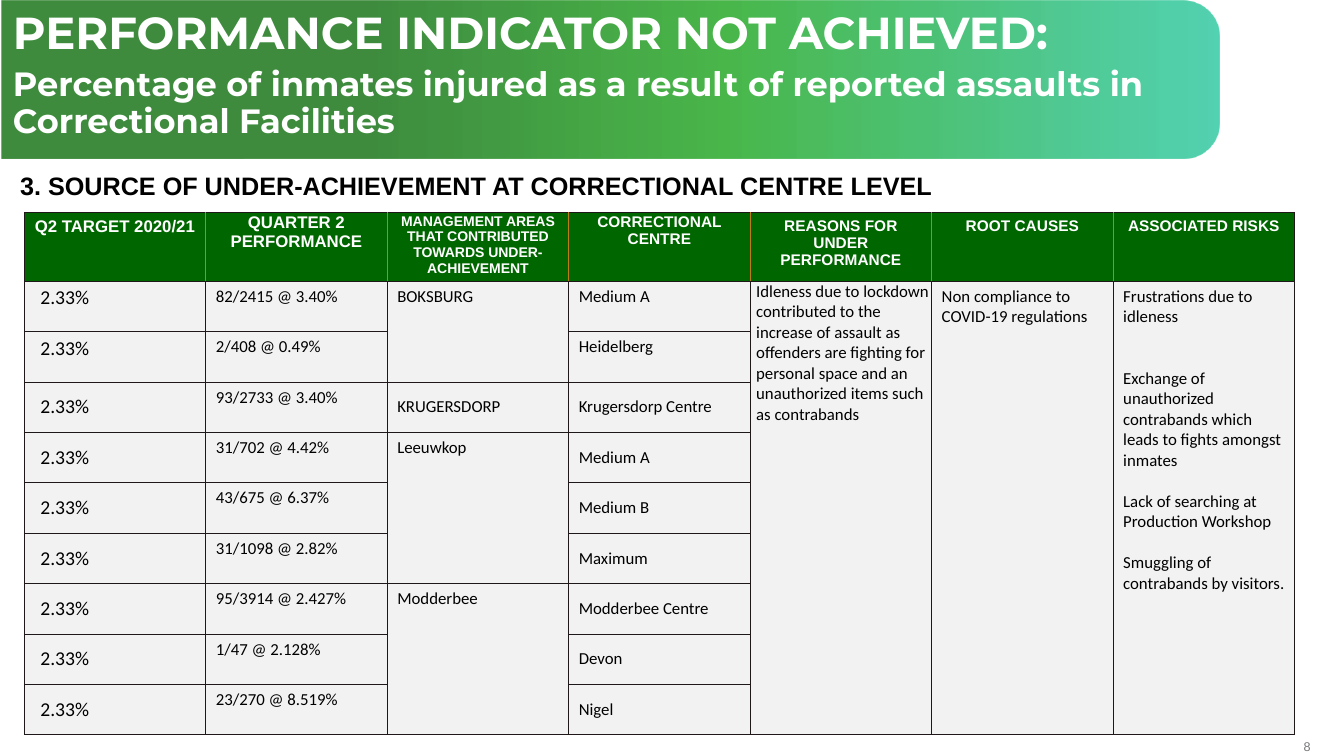
from lxml import etree
from pptx import Presentation
from pptx.dml.color import RGBColor
from pptx.enum.shapes import MSO_SHAPE as Shape
from pptx.enum.text import MSO_ANCHOR as Anchor, PP_ALIGN as Align
from pptx.oxml.ns import qn
from pptx.util import Inches, Pt

WHITE = RGBColor(0xFF, 0xFF, 0xFF)
BLACK = RGBColor(0, 0, 0)
GREY = RGBColor(0x77, 0x78, 0x7B)
PALE = RGBColor(0xF2, 0xF2, 0xF2)
GREEN = RGBColor(0, 0x66, 0)
LEAF = RGBColor(0, 0x99, 0)
TEAL = RGBColor(0, 0xBC, 0x8D)
EDGE = RGBColor(0x1E, 0x19, 0x18)
BRONZE = RGBColor(0xBF, 0x7B, 0x17)

# Heading lines, size, and whether the cell has tight margins
HEADERS = [
    (["Q2 TARGET 2020/21"], 12, False),
    (["QUARTER 2", "PERFORMANCE"], 12, True),
    (["MANAGEMENT AREAS THAT CONTRIBUTED TOWARDS UNDER-ACHIEVEMENT"], 10, True),
    (["CORRECTIONAL CENTRE"], 11, True),
    (["REASONS FOR UNDER", "PERFORMANCE"], 11, False),
    (["ROOT CAUSES"], 11, False),
    (["ASSOCIATED RISKS"], 11, False),
]
TARGET = "2.33%"
CENTRES = [
    ("82/2415 @ 3.40%", "Medium A"),
    ("2/408 @ 0.49%", "Heidelberg"),
    ("93/2733 @ 3.40%", "Krugersdorp Centre"),
    ("31/702 @ 4.42%", "Medium A"),
    ("43/675 @ 6.37%", "Medium B"),
    ("31/1098 @ 2.82%", "Maximum"),
    ("95/3914 @ 2.427%", "Modderbee Centre"),
    ("1/47 @ 2.128%", "Devon"),
    ("23/270 @ 8.519%", "Nigel"),
]
# Management area and the number of centres in it
AREAS = [("BOKSBURG", 2), ("KRUGERSDORP", 1), ("Leeuwkop", 3), ("Modderbee", 3)]
REASON = ("Idleness due to lockdown contributed to the increase of assault as "
          "offenders are fighting for personal space and an unauthorized items "
          "such as contrabands")
ROOT_CAUSE = "Non compliance to COVID-19 regulations"
# Risk and the space before it in points
RISKS = [
    ("Frustrations due to idleness", 0),
    ("Exchange of unauthorized contrabands which leads to fights amongst inmates", 29.3),
    ("Lack of searching at Production Workshop", 14.65),
    ("Smuggling of contrabands by visitors.", 14.65),
]


def write(frame, text, size=12, font="Calibri", color=BLACK, bold=False,
          align=Align.LEFT, before=0, after=0, spacing=None, indent=0):
    """Put text in the first paragraph if it is empty, otherwise in a new one."""
    first = frame.paragraphs[0]
    para = frame.add_paragraph() if first.runs else first
    para.alignment = align
    if indent:
        para._p.get_or_add_pPr().set("marL", str(Inches(indent)))
    if before:
        para.space_before = Pt(before)
    para.space_after = Pt(after)
    if spacing:
        para.line_spacing = spacing
    span = para.add_run()
    span.text = text
    span.font.size = Pt(size)
    span.font.name = font
    span.font.bold = bold
    span.font.color.rgb = color


def set_margins(holder, left, top, right, bottom):
    holder.margin_left, holder.margin_top = Inches(left), Inches(top)
    holder.margin_right, holder.margin_bottom = Inches(right), Inches(bottom)


def add_text_box(page, left, top, width, height):
    box = page.shapes.add_textbox(Inches(left), Inches(top), Inches(width), Inches(height))
    box.text_frame.word_wrap = True
    return box.text_frame


def add_banner(page):
    banner = page.shapes.add_shape(Shape.ROUND_2_SAME_RECTANGLE, Inches(5.27),
                                   Inches(-5.25), Inches(1.57), Inches(12.08))
    banner.rotation = 90
    banner.adjustments[0] = 0.233
    banner.adjustments[1] = 0
    banner.shadow.inherit = False
    banner.line.fill.background()
    banner.fill.gradient()
    banner.fill.gradient_angle = 90
    # Translucent gradient stops
    stops = next(banner._element.spPr.iter(qn("a:gsLst")))
    for stop in list(stops):
        stops.remove(stop)
    for position, color, opacity in ((30, GREEN, 75), (59, LEAF, 71), (100, TEAL, 67)):
        stop = etree.SubElement(stops, qn("a:gs"), pos=str(position * 1000))
        tint = etree.SubElement(stop, qn("a:srgbClr"), val=str(color))
        etree.SubElement(tint, qn("a:alpha"), val=str(opacity * 1000))


def style_cell(cell, fill, left=EDGE, right=EDGE):
    cell.fill.solid()
    cell.fill.fore_color.rgb = fill
    properties = cell._tc.get_or_add_tcPr()
    sides = (("L", left), ("R", right), ("T", EDGE), ("B", EDGE))
    for order, (side, color) in enumerate(sides):
        line = etree.Element(qn("a:ln" + side), w=str(Pt(0.5)))
        solid = etree.SubElement(line, qn("a:solidFill"))
        etree.SubElement(solid, qn("a:srgbClr"), val=str(color))
        properties.insert(order, line)


def fill_cell(cell, text, anchor=Anchor.TOP, **style):
    cell.vertical_anchor = anchor
    write(cell.text_frame, text, **style)


def add_table(page):
    rows, columns = len(CENTRES) + 1, len(HEADERS)
    table = page.shapes.add_table(rows, columns, Inches(0.24), Inches(2.11),
                                  Inches(12.6), Inches(5.18)).table
    table.first_row = table.horz_banding = False
    for column in table.columns:
        column.width = Inches(1.8)
    for number, row in enumerate(table.rows):
        row.height = Inches(0.5 if number else 0.68)
        for cell in row.cells if number else ():
            style_cell(cell, PALE)

    # Header row
    for column, (lines, size, tight) in enumerate(HEADERS):
        cell = table.cell(0, column)
        style_cell(cell, GREEN, left=BRONZE if column else EDGE,
                   right=BRONZE if column < columns - 1 else EDGE)
        if tight:
            set_margins(cell, 0.01, 0.01, 0.01, 0)
        for line in lines:
            write(cell.text_frame, line, size=size, font="Arial", color=WHITE,
                  bold=True, align=Align.CENTER)

    # Target, performance and centre
    for row, (performance, centre) in enumerate(CENTRES, 1):
        anchor = Anchor.TOP if row < 3 else Anchor.MIDDLE
        fill_cell(table.cell(row, 0), TARGET, anchor, size=14, indent=0.06)
        fill_cell(table.cell(row, 1), performance)
        fill_cell(table.cell(row, 3), centre, anchor)

    # Management areas
    row = 1
    for area, count in AREAS:
        cell = table.cell(row, 2)
        if count > 1:
            cell.merge(table.cell(row + count - 1, 2))
        fill_cell(cell, area, Anchor.TOP if count > 1 else Anchor.MIDDLE)
        row += count

    # Reasons, causes and risks run the full height
    for column in (4, 5, 6):
        table.cell(1, column).merge(table.cell(rows - 1, column))
    set_margins(table.cell(1, 4), 0, 0, 0, 0)
    fill_cell(table.cell(1, 4), REASON, indent=0.06)
    fill_cell(table.cell(1, 5), ROOT_CAUSE)
    for risk, gap in RISKS:
        fill_cell(table.cell(1, 6), risk, before=gap)


def main():
    deck = Presentation()
    deck.slide_width, deck.slide_height = Inches(13.33), Inches(7.5)
    page = deck.slides.add_slide(deck.slide_layouts[6])

    # Page number
    number = add_text_box(page, 12.61, 7.33, 0.39, 0.15)
    set_margins(number, 0, 0, 0, 0)
    number.vertical_anchor = Anchor.MIDDLE
    write(number, "8", size=9, font="Arial", color=GREY, align=Align.RIGHT)

    add_banner(page)
    section = add_text_box(page, 0.1, 1.64, 9.65, 0.4)
    write(section, "3. SOURCE OF UNDER-ACHIEVEMENT AT CORRECTIONAL CENTRE LEVEL",
          size=18, font="Arial", bold=True)
    add_table(page)

    # Title
    title = add_text_box(page, 0.03, 0.06, 11.98, 0.57)
    for text, size in (("PERFORMANCE INDICATOR NOT ACHIEVED:", 32),
                       ("Percentage of inmates injured as a result of reported "
                        "assaults in Correctional Facilities", 24)):
        write(title, text, size=size, font="Montserrat", color=WHITE, bold=True,
              spacing=0.9, after=6)

    deck.save("out.pptx")


if __name__ == "__main__":
    main()
